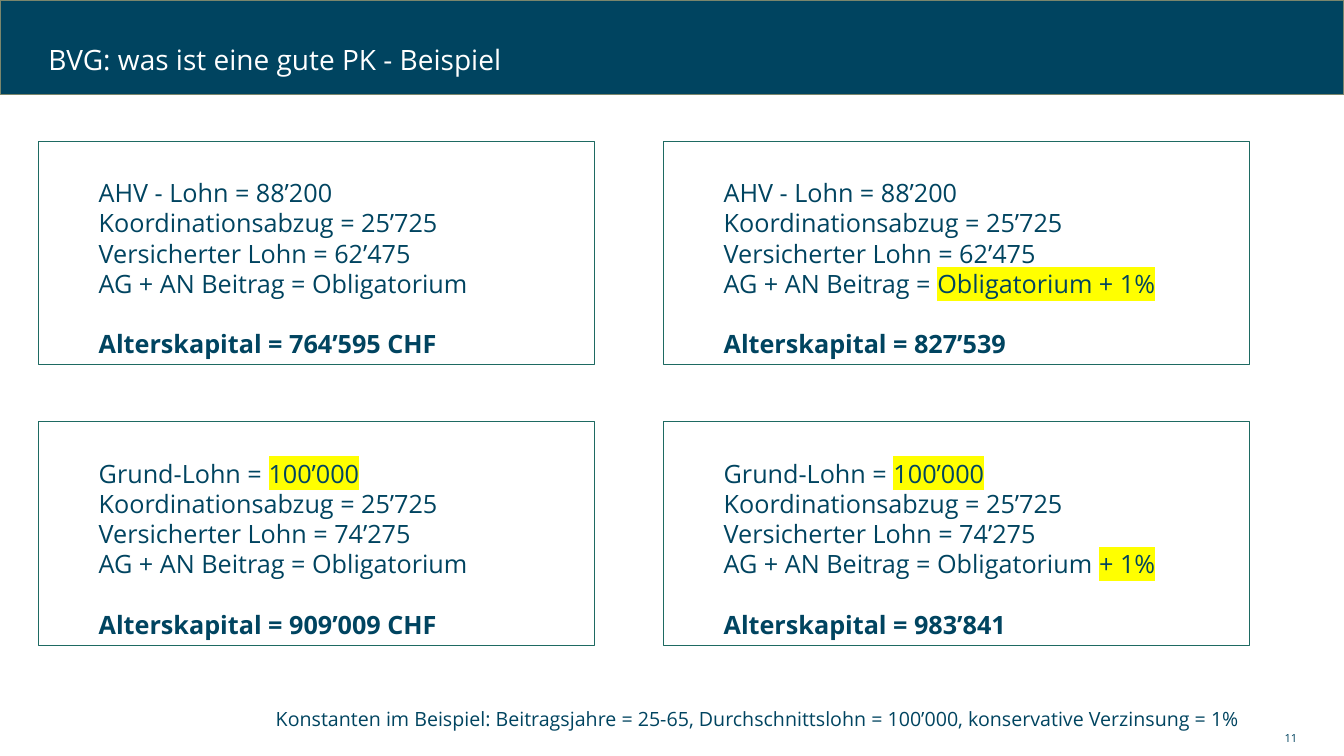
from lxml.etree import SubElement
from pptx import Presentation
from pptx.dml.color import RGBColor as Rgb
from pptx.enum.shapes import MSO_SHAPE as Preset
from pptx.enum.text import MSO_ANCHOR as Anchor, MSO_AUTO_SIZE as AutoSize, PP_ALIGN as Align
from pptx.oxml.ns import qn
from pptx.util import Pt

COLORS = {"navy": "004460", "olive": "7A866C", "green": "1E6A62", "white": "FFFFFF", "marker": "FFFF00"}
FONT = "Open Sans"
LINE_PITCH = 21.6

CASES = [
    [
        [("AHV - Lohn = 88’200", ""), "62’475", ("Obligatorium", ""), "764’595 CHF"],
        [("AHV - Lohn = 88’200", ""), "62’475", ("", "Obligatorium + 1%"), "827’539"],
    ],
    [
        [("Grund-Lohn = ", "100’000"), "74’275", ("Obligatorium", ""), "909’009 CHF"],
        [("Grund-Lohn = ", "100’000"), "74’275", ("Obligatorium ", "+ 1%"), "983’841"],
    ],
]
COLUMNS = [(27.4, 397.4), (473.8, 419)]
ROW_TOP, ROW_STEP, ROW_HEIGHT = 100.8, 200.2, 159.8


def apply(target, **formats):
    """Set every given format value on the target."""
    for attribute, value in formats.items():
        setattr(target, attribute, value)


def style_font(font, size, color="navy", **formats):
    """Give a font the deck typeface, size and colour."""
    apply(font, name=FONT, size=Pt(size), **formats)
    font.color.rgb = Rgb.from_string(COLORS[color])


def add_run(paragraph, wording, size, marked=False, **formats):
    """Append a run, optionally with the yellow marker behind it."""
    run = paragraph.add_run()
    run.text = wording
    style_font(run.font, size, **formats)
    if marked:
        properties = run.font._element
        highlight = SubElement(properties, qn("a:highlight"))
        SubElement(highlight, qn("a:srgbClr"), val=COLORS["marker"])
        properties.find(qn("a:solidFill")).addnext(highlight)


def add_rectangle(slide, box, outline, width):
    """Draw an outlined rectangle without fill or shadow."""
    rectangle = slide.shapes.add_shape(Preset.RECTANGLE, *map(Pt, box))
    rectangle.shadow.inherit = False
    rectangle.fill.background()
    rectangle.line.color.rgb = Rgb.from_string(COLORS[outline])
    rectangle.line.width = Pt(width)
    return rectangle


def add_header(slide, box):
    """Place the title on a dark band."""
    left, top, width, height = box
    band = add_rectangle(slide, box, "olive", 1)
    band.fill.solid()
    band.fill.fore_color.rgb = Rgb.from_string(COLORS["navy"])
    title = slide.shapes.title
    band._element.addnext(title._element)
    apply(title, left=Pt(left + 27.4), top=Pt(top + 24.5), width=Pt(width - 166.4), height=Pt(38.9))
    apply(title.text_frame, vertical_anchor=Anchor.MIDDLE, word_wrap=True, auto_size=AutoSize.NONE)
    heading = title.text_frame.paragraphs[0]
    apply(heading, alignment=Align.LEFT, line_spacing=0.9)
    add_run(heading, "BVG: was ist eine gute PK - Beispiel", 20, color="white")


def add_case(slide, box, case):
    """Frame one pension example with its lines and resulting capital."""
    wage, insured, contribution, capital = case
    frame = add_rectangle(slide, box, "green", 0.75).text_frame
    apply(frame, vertical_anchor=Anchor.TOP, word_wrap=True, margin_top=Pt(26))
    lead, marked_share = contribution
    lines = [
        wage,
        ("Koordinationsabzug = 25’725", ""),
        (f"Versicherter Lohn = {insured}", ""),
        (f"AG + AN Beitrag = {lead}", marked_share),
        (f"Alterskapital = {capital}", ""),
    ]
    for index, (plain, marked) in enumerate(lines):
        is_result = index == len(lines) - 1
        line = frame.add_paragraph() if index else frame.paragraphs[0]
        apply(line, level=1, alignment=Align.LEFT, line_spacing=Pt(LINE_PITCH))
        line._p.get_or_add_pPr().set("marL", str(Pt(36)))
        line._p.get_or_add_pPr().set("indent", "0")
        if is_result:
            line.space_before = Pt(LINE_PITCH)
        add_run(line, plain, 18, bold=is_result)
        if marked:
            add_run(line, marked, 18, marked=True)


def add_assumptions(slide, box):
    """Write the constants of the example, flush right."""
    frame = slide.shapes.add_textbox(*map(Pt, box)).text_frame
    frame.word_wrap = False
    note = frame.paragraphs[0]
    note.alignment = Align.RIGHT
    add_run(
        note,
        "Konstanten im Beispiel: Beitragsjahre = 25-65, Durchschnittslohn = 100’000, "
        "konservative Verzinsung = 1%",
        14,
    )


def add_page_number(slide, box):
    """Write the page number, flush right."""
    frame = slide.shapes.add_textbox(*map(Pt, box)).text_frame
    apply(frame, word_wrap=True, vertical_anchor=Anchor.MIDDLE)
    number = frame.paragraphs[0]
    number.alignment = Align.RIGHT
    add_run(number, "11", 8)


def main():
    """Build and save the slide."""
    deck = Presentation()
    apply(deck, slide_width=Pt(960), slide_height=Pt(540))
    slide = deck.slides.add_slide(deck.slide_layouts.get_by_name("Title Only"))
    add_header(slide, (0, 0, 960, 67.7))
    for row, cases in enumerate(CASES):
        for (left, width), case in zip(COLUMNS, cases):
            add_case(slide, (left, ROW_TOP + row * ROW_STEP, width, ROW_HEIGHT), case)
    add_assumptions(slide, (187.9, 501.1, 704.9, 24.5))
    add_page_number(slide, (678.2, 518.4, 255.6, 17.3))
    deck.save("out.pptx")


if __name__ == "__main__":
    main()
